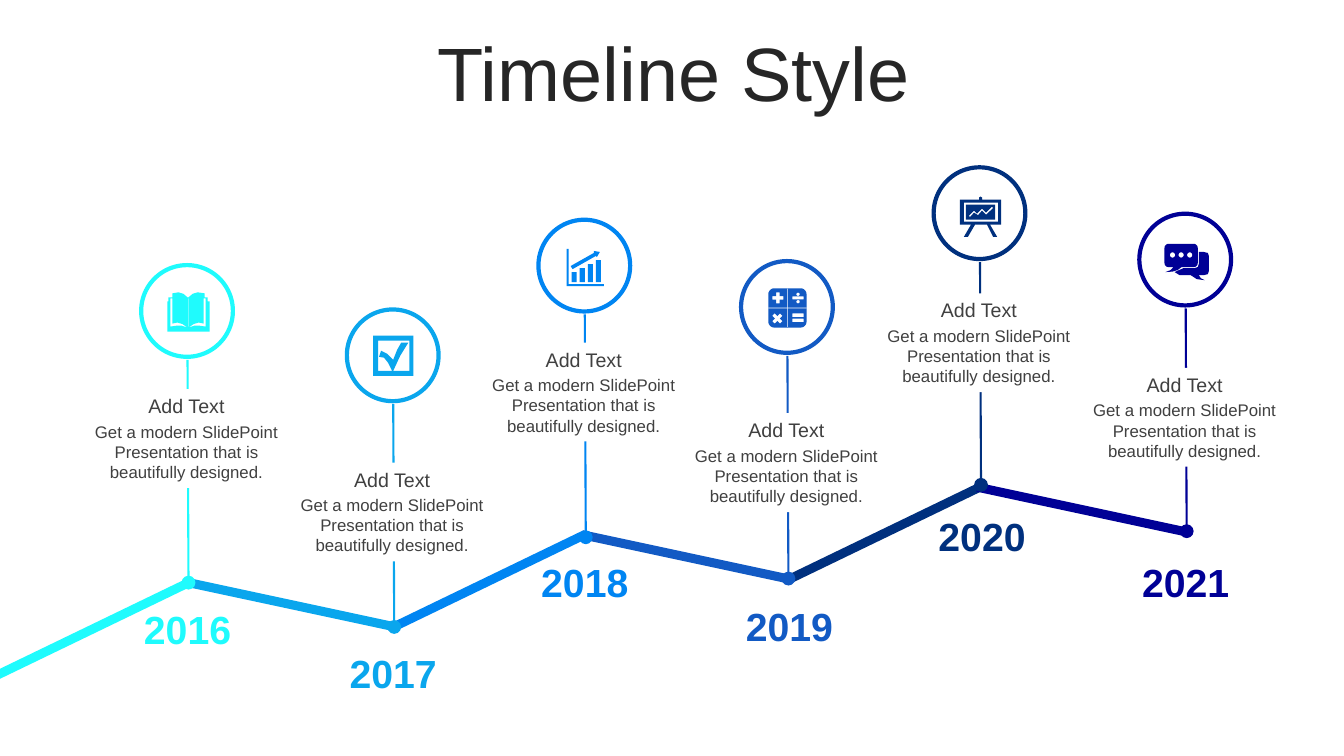
from dataclasses import dataclass
from math import cos, pi, sin

from lxml.etree import SubElement
from pptx import Presentation
from pptx.dml.color import RGBColor
from pptx.enum.shapes import MSO_CONNECTOR, MSO_SHAPE
from pptx.enum.text import MSO_ANCHOR, MSO_AUTO_SIZE, PP_ALIGN
from pptx.oxml.ns import qn
from pptx.util import Inches, Pt

Point = tuple[float, float]
Path = list[Point]

WHITE = RGBColor(0xFF, 0xFF, 0xFF)
INK = RGBColor(0x26, 0x26, 0x26)
GREY = RGBColor(0x40, 0x40, 0x40)
AQUA = RGBColor(0x1F, 0xFB, 0xFD)
SKY = RGBColor(0x0A, 0xA6, 0xED)
AZURE = RGBColor(0x00, 0x85, 0xF2)
BLUE = RGBColor(0x12, 0x5A, 0xC4)
NAVY = RGBColor(0x00, 0x30, 0x7E)
DEEP = RGBColor(0x00, 0x00, 0x96)

RING = 0.91
UNIT = Inches(1) / 1000  # outlines are drawn in thousandths of an inch
HEAD = "Add Text"
BODY = "Get a modern SlidePoint Presentation that is beautifully designed."


# Outline parts, in hundredths of an inch
def box(x: float, y: float, w: float, h: float) -> Path:
    return [(x, y), (x + w, y), (x + w, y + h), (x, y + h)]


def arc(x: float, y: float, r: float, start: float, sweep: float, steps: int) -> Path:
    turns = [start + sweep * i / steps for i in range(steps + 1)]
    return [(x + r * cos(t), y + r * sin(t)) for t in turns]


def disc(x: float, y: float, r: float) -> Path:
    return arc(x, y, r, 0, 2 * pi, 24)


def soft(w: float, h: float, r: float) -> Path:
    """Box with round corners."""
    mids = [(w - r, h - r), (r, h - r), (r, r), (w - r, r)]
    return [p for i, (x, y) in enumerate(mids) for p in arc(x, y, r, i * pi / 2, pi / 2, 6)]


def cross(x: float, y: float, arm: float, half: float, turn: float = 0) -> Path:
    side = [(arm, -half), (arm, half), (half, half)]
    turns = [turn + i * pi / 2 for i in range(4)]
    return [(x + a * cos(t) - b * sin(t), y + a * sin(t) + b * cos(t))
            for t in turns for a, b in side]


def flip(part: Path, width: float) -> Path:
    return [(width - x, y) for x, y in part]


# Icons
PAGE = [(3, 6), (5, 6), (5, 31), (10, 30), (15, 31.5), (20, 35), (14, 33), (10, 33), (3, 34)]
BOOK = [
    [(0, 39), (0, 9), (1, 9), (1, 5), (5, 5), (5, 1), (11, 0), (16, 1.5), (20, 5),
     (21, 5), (25, 1.5), (30, 0), (37, 1), (37, 5), (40, 5), (40, 9), (42, 9), (42, 39)],
    PAGE, flip(PAGE, 41), box(20.3, 6, 0.5, 28),
]
CHECK = [
    box(0, 0, 40, 40), box(5, 5, 31, 30),
    [(6, 21), (8, 15), (14, 18), (20, 24), (24, 14), (28, 7), (35, 7), (27, 20),
     (20, 35), (19, 35), (15, 27), (11, 22)],
]
CHART = [box(5 + 8 * i, 23 - 4 * i, 5, 10 + 4 * i) for i in range(4)] + [
    [(27, 2), (33, 3), (30, 8), (29, 7), (6, 20), (4, 17), (27, 4)],
    [(0, 0), (2, 0), (2, 35), (37, 35), (37, 37), (0, 37)],
]
CALC = [
    soft(38, 39, 6), cross(19, 19.5, 19, 0.4),
    cross(9.5, 9.5, 5.5, 1.7), cross(9, 30, 5.5, 1.7, pi / 4),
    box(24, 8, 11, 3), disc(29.5, 6, 1.7), disc(29.5, 13.3, 1.7),
    box(24, 25, 11, 3.5), box(24, 30, 11, 3.5),
]
BOARD = [
    [(19, 3), (19, 1), (20.5, 0), (22, 1), (22, 3), (41, 3), (41, 28), (30, 28), (37, 40),
     (33, 40), (27, 28), (15, 28), (8, 40), (4, 40), (11, 28), (0, 28), (0, 3)],
    box(4, 6, 34, 19), box(6, 8, 29, 15),
    [(9, 19), (14, 14), (17, 17), (22, 12), (26, 16), (32, 10), (33, 11.5),
     (26, 18), (22, 14), (18, 18.5), (14, 16), (10, 20.5)],
]
CHAT = [
    soft(33, 23, 4), *[disc(8 + 8.5 * i, 11, 2.6) for i in range(3)],
    [(9, 23), (17, 23), (13, 26), (8, 27.5), (1, 28), (6, 26)],
    [(34, 8), (39, 8), (43, 9), (44, 12), (44, 27), (43, 30), (39, 31), (34, 31),
     (36, 34), (40, 36), (32, 35), (26, 31), (15, 31), (10, 28), (19, 24),
     (30, 24), (33, 23), (34, 20)],
]


@dataclass
class Stop:
    year: str
    tint: RGBColor
    mid: float
    top: float
    note: float
    date: Point
    spot: Point
    icon: list[Path]


STOPS = [
    Stop("2016", AQUA, 1.86, 2.63, 3.86, (1.08, 5.96), (1.66, 2.9), BOOK),
    Stop("2017", SKY, 3.9, 3.07, 4.59, (3.12, 6.39), (3.7, 3.33), CHECK),
    Stop("2018", AZURE, 5.8, 2.18, 3.4, (5.02, 5.49), (5.62, 2.47), CHART),
    Stop("2019", BLUE, 7.81, 2.59, 4.1, (7.05, 5.93), (7.62, 2.86), CALC),
    Stop("2020", NAVY, 9.72, 1.66, 2.91, (8.96, 5.03), (9.52, 1.95), BOARD),
    Stop("2021", DEEP, 11.76, 2.12, 3.65, (10.98, 5.49), (11.55, 2.42), CHAT),
]


def write(shape, text: str, size: int, tint: RGBColor, bold: bool = False) -> None:
    frame = shape.text_frame
    frame.word_wrap = True
    para = frame.paragraphs[0]
    para.alignment = PP_ALIGN.CENTER
    run = para.add_run()
    run.text = text
    form = {"name": "Arial", "size": Pt(size), "bold": bold}
    for key, value in form.items():
        setattr(run.font, key, value)
    run.font.color.rgb = tint


def paint(shape, tint: RGBColor) -> None:
    shape.shadow.inherit = False
    shape.fill.solid()
    shape.fill.fore_color.rgb = tint
    shape.line.fill.background()


def block(shapes, x: float, y: float, w: float, h: float, tint: RGBColor):
    shape = shapes.add_shape(MSO_SHAPE.RECTANGLE, *map(Inches, (x, y, w, h)))
    paint(shape, tint)
    return shape


def ring(shapes, stop: Stop) -> None:
    spot = (stop.mid - 0.46, stop.top, RING, RING)
    shape = shapes.add_shape(MSO_SHAPE.OVAL, *map(Inches, spot))
    shape.shadow.inherit = False
    shape.fill.background()
    shape.line.color.rgb = stop.tint
    shape.line.width = Pt(3)


def stem(shapes, stop: Stop) -> None:
    ends = (stop.mid, stop.top + 0.94, stop.mid + 0.01, stop.top + 3.15)
    wire = shapes.add_connector(MSO_CONNECTOR.STRAIGHT, *map(Inches, ends))
    wire.line.color.rgb = stop.tint
    wire.line.width = Pt(1.5)
    SubElement(wire.line._get_or_add_ln(), qn("a:tailEnd"), type="oval", w="lg", len="lg")
    SubElement(wire._element.spPr, qn("a:effectLst"))


def note(shapes, stop: Stop) -> None:
    for text, size, drop, high in ((HEAD, 14, 0, 0.34), (BODY, 12, 0.27, 0.71)):
        shape = block(shapes, stop.mid - 1.16, stop.note + drop, 2.3, high, WHITE)
        shape.text_frame.vertical_anchor = MSO_ANCHOR.TOP
        shape.text_frame.auto_size = MSO_AUTO_SIZE.SHAPE_TO_FIT_TEXT
        write(shape, text, size, GREY)


def date(shapes, stop: Stop) -> None:
    label = shapes.add_textbox(*map(Inches, (*stop.date, 1.56, 0.57)))
    write(label, stop.year, 28, stop.tint, True)


def icon(shapes, stop: Stop) -> None:
    parts = [[(x * 10, y * 10) for x, y in part] for part in stop.icon]
    pen = shapes.build_freeform(*parts[0][0], scale=UNIT)
    for i, part in enumerate(parts):
        if i:
            pen.move_to(*part[0])
        pen.add_line_segments(part[1:], close=True)
    paint(pen.convert_to_shape(*map(Inches, stop.spot)), stop.tint)


def main() -> None:
    deck = Presentation()
    deck.slide_width, deck.slide_height = Inches(13.33), Inches(7.5)
    slide = deck.slides.add_slide(deck.slide_layouts[5])
    shapes = slide.shapes

    # Title
    title = shapes.title
    place = {"left": 0.35, "top": 0.37, "width": 12.66, "height": 0.79}
    for key, value in place.items():
        setattr(title, key, Inches(value))
    write(title, "Timeline Style", 54, INK)
    title.text_frame.vertical_anchor = MSO_ANCHOR.MIDDLE
    title.text_frame.paragraphs[0].line_spacing = 0.9

    # Zigzag band
    for i, stop in enumerate(STOPS):
        bar = block(shapes, -0.13 + 1.96 * i, 6.19 - 1.18 * i / 5, 2.12, 0.09, stop.tint)
        bar.rotation = 12.1 if i % 2 else -25.8

    # Stops along the band
    for stop in STOPS:
        for draw in (ring, stem, note, date, icon):
            draw(shapes, stop)

    deck.save("out.pptx")


if __name__ == "__main__":
    main()
